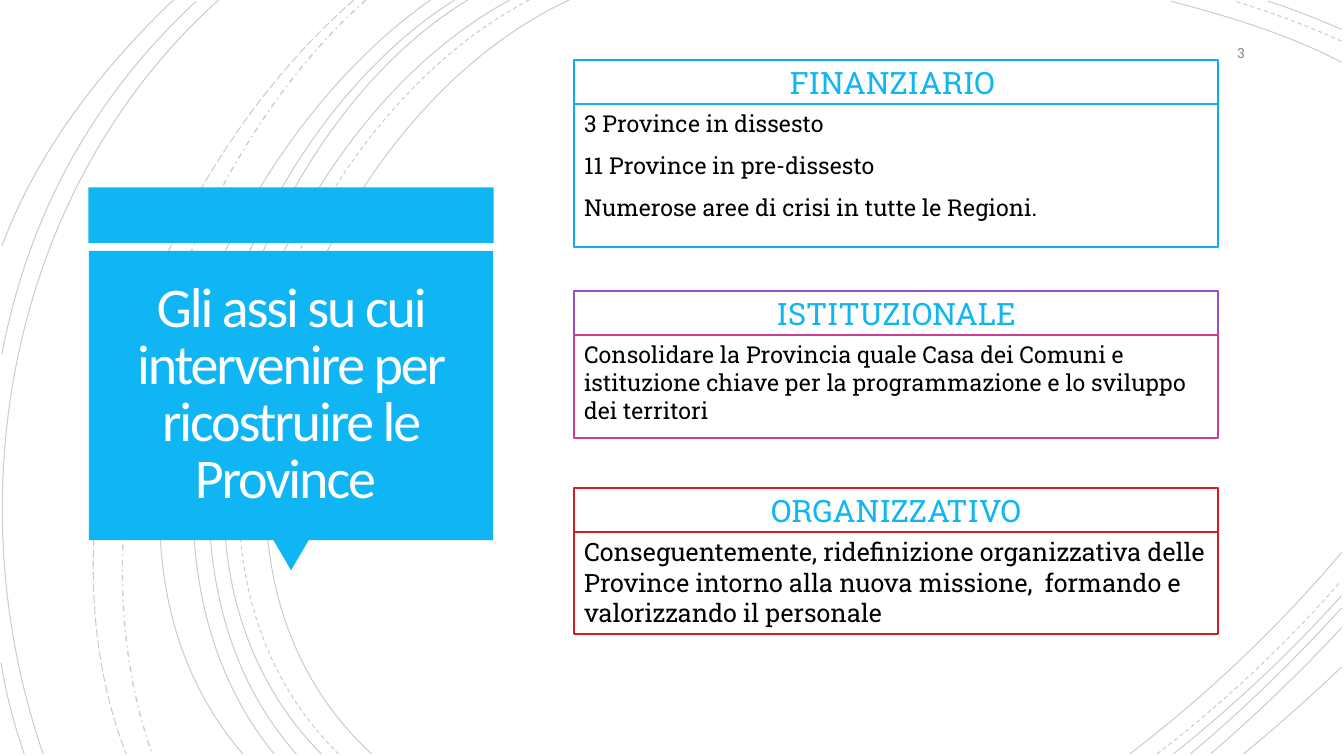
"""Build the slide on the three axes for rebuilding the Provinces."""
import lxml.etree
import pptx
import pptx.dml.color
import pptx.enum.dml
import pptx.enum.shapes
import pptx.enum.text
import pptx.oxml.ns
import pptx.util

Cm, Pt = pptx.util.Cm, pptx.util.Pt
SHAPE = pptx.enum.shapes.MSO_SHAPE
DASH = pptx.enum.dml.MSO_LINE
ALIGN = pptx.enum.text.PP_ALIGN
ANCHOR = pptx.enum.text.MSO_ANCHOR
ACCENT = "10B6F4"


def paint(fill, hex_color):
    """Make a fill solid in the given colour."""
    fill.solid()
    fill.fore_color.rgb = pptx.dml.color.RGBColor.from_string(hex_color)


def write(holder, lines, size, color, align, anchor, before=0, font="Roboto Slab"):
    """Fill a shape with one paragraph per line of text."""
    frame = holder.text_frame
    frame.word_wrap = True
    frame.vertical_anchor = anchor
    frame.text = "\n".join(lines)
    for paragraph in frame.paragraphs:
        paragraph.alignment = align
        paragraph.space_before = Pt(before)
        paragraph.font.size = Pt(size)
        paragraph.font.name = font
        paint(paragraph.font.fill, color)


deck = pptx.Presentation()
deck.slide_width, deck.slide_height = Cm(33.87), Cm(19.05)
slide = deck.slides.add_slide(deck.slide_layouts[6])
shapes = slide.shapes

arcs = [
    (DASH.SOLID, 0.75, [
        [(14.35, 0), (8, 2.92), (3.63, 13.72), (9.37, 19)],
        [(33.81, 1.57), (32.46, 0.86), (30.94, 0.41), (29.51, 0.03)],
        [(28.47, 19), (30.4, 17.53), (32.23, 15.8), (33.81, 13.92)],
    ]),
    (DASH.DASH, 0.75, [
        [(13.34, 0), (7.24, 3.18), (3.12, 13.64), (8.53, 19)],
        [(33.81, 1.04), (32.94, 0.64), (32, 0.3), (31.12, 0.03)],
        [(29.16, 19), (30.81, 17.73), (32.39, 16.26), (33.78, 14.66)],
    ]),
    (DASH.SOLID, 0.75, [
        [(12.85, 0), (6.86, 3.23), (2.79, 13.64), (8.1, 19)],
        [(33.81, 0.74), (33.2, 0.48), (32.59, 0.23), (31.95, 0.03)],
        [(29.57, 19), (31.06, 17.81), (32.51, 16.46), (33.81, 15.01)],
        [(11.79, 0), (6.2, 3.38), (2.79, 13.74), (7.47, 19)],
        [(30, 19), (31.34, 17.88), (32.61, 16.64), (33.81, 15.32)],
        [(11.46, 0), (5.87, 3.51), (2.46, 13.54), (6.91, 19)],
        [(30.51, 19), (31.65, 18.01), (32.77, 16.94), (33.81, 15.82)],
        [(10.85, 0), (5.51, 3.73), (1.35, 13.44), (6.12, 19)],
        [(31.34, 19), (32.18, 18.31), (33, 17.58), (33.81, 16.81)],
    ]),
    (DASH.DASH_DOT, 1, [[(9.22, 0), (4.47, 4.22), (1.65, 12.93), (3.84, 19)]]),
    (DASH.LONG_DASH, 0.75, [[(8.92, 0), (3.99, 4.29), (0.74, 12.67), (3.18, 19)]]),
    (DASH.SOLID, 0.75, [
        [(5.51, 0), (0.28, 4.7), (-1.17, 12.45), (1.09, 19)],
        [(4.95, 0.03), (2.34, 2.44), (0.71, 5.44), (0.05, 8.92)],
        [(0.03, 16.71), (0.15, 17.5), (0.36, 18.26), (0.61, 19)],
        [(4.37, 0), (2.54, 1.75), (0.94, 3.81), (0.05, 6.2)],
    ]),
]
for dash, width, curves in arcs:
    for controls in curves:
        start, *others = [(Cm(x), Cm(y)) for x, y in controls]
        builder = shapes.build_freeform(*start)
        builder.add_line_segments(others, close=False)
        arc = builder.convert_to_shape()
        outline = arc._element.xpath(".//a:path")[0]
        bezier = lxml.etree.SubElement(outline, pptx.oxml.ns.qn("a:cubicBezTo"))
        for segment in outline.xpath("a:lnTo"):
            bezier.append(segment[0])
            outline.remove(segment)
        arc.shadow.inherit = False
        arc.fill.background()
        paint(arc.line.fill, "000000")
        arc.line.width = Pt(width)
        arc.line.dash_style = dash
        stroke = arc._element.xpath(".//a:ln//a:srgbClr")[0]
        lxml.etree.SubElement(stroke, pptx.oxml.ns.qn("a:alpha"), val="20000")

for preset, left, top, width, height, turn in [
    (SHAPE.RECTANGLE, 2.23, 4.72, 10.21, 1.4, 0),
    (SHAPE.ISOSCELES_TRIANGLE, 6.89, 13.61, 0.89, 0.76, 180),
    (SHAPE.RECTANGLE, 2.24, 6.32, 10.19, 7.29, 0),
]:
    callout = shapes.add_shape(preset, Cm(left), Cm(top), Cm(width), Cm(height))
    callout.rotation = turn
    callout.shadow.inherit = False
    paint(callout.fill, ACCENT)
    callout.line.fill.background()

title = shapes.add_textbox(Cm(2.46), Cm(6.56), Cm(9.73), Cm(6.83))
write(title, ["Gli assi su cui intervenire per ricostruire le Province "],
      40, "FFFEFF", ALIGN.CENTER, ANCHOR.MIDDLE, font="Calibri")
title.text_frame.margin_top = title.text_frame.margin_bottom = Cm(0.25)
title_line = title.text_frame.paragraphs[0]
title_line.line_spacing = 0.85
title_line.runs[0]._r.get_or_add_rPr().set("spc", "-150")

HEADING_HEIGHT = 1.11
axes = [
    (1.52, 3.6, "0FAEE9", "0FAEE9", 16.65, "FINANZIARIO ",
     ["3 Province in dissesto", "11 Province in pre-dissesto",
      "Numerose aree di crisi in tutte le Regioni."]),
    (7.34, 2.59, "984EC7", "CC3E91", 16.65, "ISTITUZIONALE",
     ["Consolidare la Provincia quale Casa dei Comuni e istituzione chiave "
      "per la programmazione e lo sviluppo dei territori"]),
    (12.29, 2.57, "D02026", "D02026", 18, "ORGANIZZATIVO",
     ["Conseguentemente, ridefinizione organizzativa delle Province intorno "
      "alla nuova missione,  formando e valorizzando il personale"]),
]
for top, body_height, heading_border, body_border, body_size, heading, body in axes:
    for y, height, border, lines, size, color, align, anchor in [
        (top, HEADING_HEIGHT, heading_border, [heading], 22, ACCENT,
         ALIGN.CENTER, ANCHOR.MIDDLE),
        (top + HEADING_HEIGHT, body_height, body_border, body, body_size, "000000",
         ALIGN.LEFT, ANCHOR.TOP),
    ]:
        panel = shapes.add_shape(SHAPE.RECTANGLE, Cm(14.47), Cm(y), Cm(16.23), Cm(height))
        panel.shadow.inherit = False
        paint(panel.fill, "FFFFFF")
        paint(panel.line.fill, border)
        panel.line.width = Pt(1.25)
        write(panel, lines, size, color, align, anchor, before=10)

page_number = shapes.add_textbox(Cm(29.08), Cm(0.89), Cm(2.54), Cm(0.89))
write(page_number, ["3"], 10, "8C8C8C", ALIGN.RIGHT, ANCHOR.MIDDLE)

deck.save("out.pptx")
